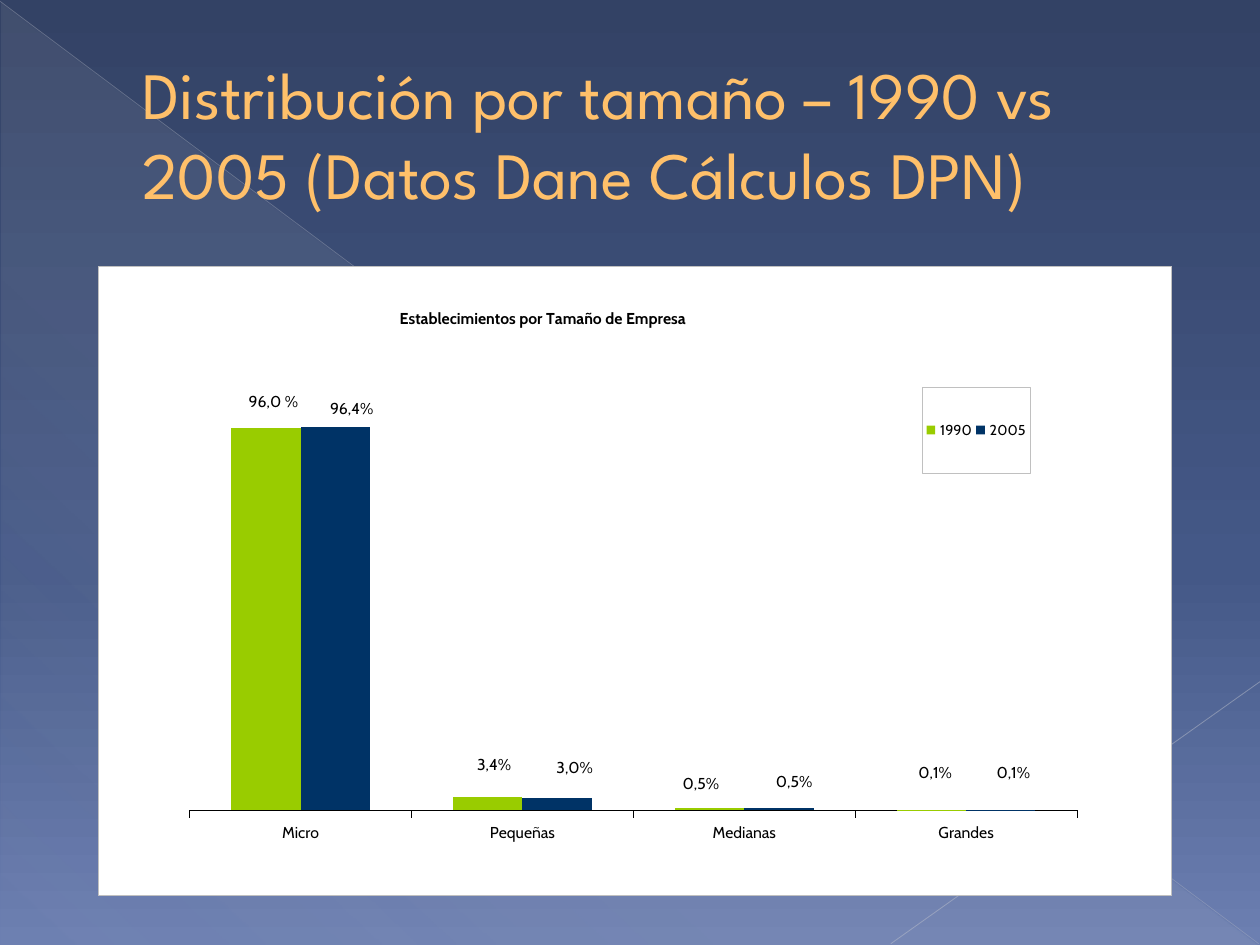
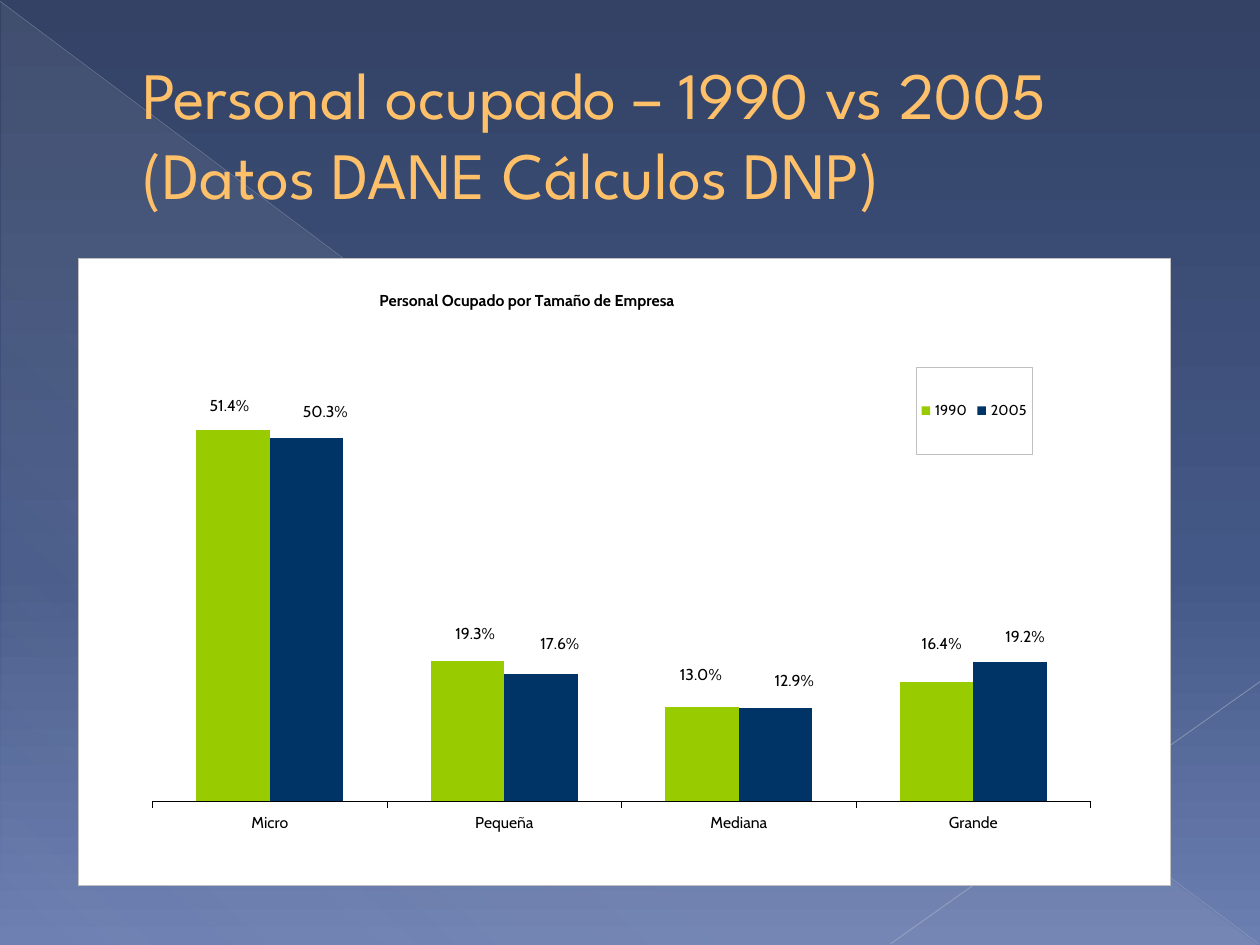
from dataclasses import dataclass
from typing import Any, Optional

from lxml import etree
from pptx import Presentation
from pptx import util as u
from pptx.chart import data as chart_data
from pptx.dml.color import RGBColor
from pptx.enum import chart as ce
from pptx.enum import shapes, text
from pptx.oxml import ns

COLORS = {
    "sky_top": "334265", "sky_middle": "445887", "sky_bottom": "6C7FB1",
    "haze": "D4D4D6", "diagonal": "B9BDC8", "corner": "C1C4CE",
    "title": "FFC06A", "title_outline": "A67800",
    "panel": "FFFFFF", "border": "C0C0C0", "ink": "000000",
    "1990": "99CC00", "2005": "003366",
}
TITLE_FONT, CHART_FONT = "League Spartan", "Cabin"
LABEL_SIZE = 9


@dataclass(frozen=True)
class Ray:
    start: tuple[float, float]
    end: tuple[float, float]
    color: str
    width: float
    opacity: int


@dataclass(frozen=True)
class YearSeries:
    year: str
    values: tuple[float, ...]
    label_shifts: tuple[tuple[float, float], ...]  # inches from the bar's own label place
    captions: Optional[tuple[str, ...]] = None


@dataclass(frozen=True)
class ChartSlide:
    heading: str
    chart_title: str
    box: tuple[float, float, float, float]
    categories: tuple[str, ...]
    years: tuple[YearSeries, ...]
    number_format: str
    axis_max: float
    gridlines: bool
    plot_area: tuple[float, ...]  # this and the next two are fractions of the chart
    legend_area: tuple[float, ...]
    title_corner: tuple[float, ...]


RAYS = (
    Ray((0, 0.01), (9.99, 7.49), "diagonal", 0.39, 35),
    Ray((10, 5.41), (7.07, 7.49), "corner", 0.47, 45),
)

SLIDES = (
    ChartSlide(
        heading="Distribución por tamaño – 1990 vs 2005 (Datos Dane Cálculos DPN)",
        chart_title="Establecimientos por Tamaño de Empresa",
        box=(0.78, 2.11, 8.52, 5),
        categories=("Micro", "Pequeñas", "Medianas", "Grandes"),
        years=(
            YearSeries("1990", (96, 3.4, 0.5, 0.1),
                       ((0.06, -0.09), (0.05, -0.14), (-0.07, -0.08), (0.03, -0.18)),
                       ("96,0 %", "3,4%", "0,5%", "0,1%")),
            YearSeries("2005", (96.3, 3, 0.5, 0.1),
                       ((0.13, -0.03), (0.14, -0.13), (0.12, -0.1), (0.1, -0.18)),
                       ("96,4%", "3,0%", "0,5%", "0,1%")),
        ),
        number_format="0.0", axis_max=100, gridlines=False,
        plot_area=(0.085, 0.232, 0.827, 0.633),
        legend_area=(0.768, 0.192, 0.1, 0.137),
        title_corner=(0.278, 0.06),
    ),
    ChartSlide(
        heading="Personal ocupado – 1990 vs 2005 (Datos DANE Cálculos DNP)",
        chart_title="Personal Ocupado por Tamaño de Empresa",
        box=(0.62, 2.05, 8.67, 4.98),
        categories=("Micro", "Pequeña", "Mediana", "Grande"),
        years=(
            YearSeries("1990", (0.514, 0.193, 0.13, 0.164),
                       ((-0.03, -0.07), (0.06, -0.1), (-0.01, -0.14), (0.04, -0.19))),
            YearSeries("2005", (0.503, 0.176, 0.129, 0.192),
                       ((0.15, -0.09), (0.15, -0.12), (0.15, -0.1), (0.12, -0.09))),
        ),
        number_format="0.0%", axis_max=0.6, gridlines=True,
        plot_area=(0.068, 0.174, 0.859, 0.691),
        legend_area=(0.767, 0.173, 0.107, 0.139),
        title_corner=(0.273, 0.044),
    ),
)


def rgb(name: str) -> RGBColor:
    return RGBColor.from_string(COLORS[name])


def add_node(parent: Any, tag: str, **attributes: Any) -> Any:
    values = {key: str(value) for key, value in attributes.items()}
    return etree.SubElement(parent, ns.qn(tag), values)


def add_color(parent: Any, name: str, opacity: int = 100) -> None:
    color = add_node(parent, "a:srgbClr", val=COLORS[name])
    if opacity < 100:
        add_node(color, "a:alpha", val=opacity * 1000)


def set_gradient(holder: Any, stops: tuple, angle: int) -> None:
    """Replace the solid fill in holder; each stop is position, colour, opacity."""
    solid = holder.find(ns.qn("a:solidFill"))
    gradient = etree.Element(ns.qn("a:gradFill"), rotWithShape="1")
    stop_list = add_node(gradient, "a:gsLst")
    for position, color, opacity in stops:
        add_color(add_node(stop_list, "a:gs", pos=position * 1000), color, opacity)
    add_node(gradient, "a:lin", ang=angle * 60000, scaled=0)
    holder.replace(solid, gradient)


def style_font(font: Any, *, size: float, face: str = CHART_FONT,
               color: str = "ink", bold: bool = False) -> None:
    font.size, font.name, font.bold = u.Pt(size), face, bold
    font.color.rgb = rgb(color)


def write(frame: Any, content: str, **font_format: Any) -> Any:
    run = frame.paragraphs[0].add_run()
    run.text = content
    style_font(run.font, **font_format)
    return run


def draw_backdrop(slide: Any) -> None:
    slide.background.fill.solid()
    set_gradient(slide.element.find(".//" + ns.qn("p:bgPr")),
                 ((0, "sky_top", 100), (60, "sky_middle", 100), (100, "sky_bottom", 100)), 90)
    haze = slide.shapes.add_shape(shapes.MSO_SHAPE.RIGHT_TRIANGLE, u.Inches(0.01),
                                  u.Inches(0.02), u.Inches(9.98), u.Inches(7.48))
    haze.shadow.inherit = False
    haze.line.fill.background()
    haze.fill.solid()
    set_gradient(haze.element.spPr, ((0, "haze", 10), (70, "haze", 8), (100, "haze", 1)), 133)
    for ray in RAYS:
        line = slide.shapes.add_connector(shapes.MSO_CONNECTOR.STRAIGHT,
                                          *map(u.Inches, ray.start + ray.end))
        line.line.width = u.Pt(ray.width)
        line.line.color.rgb = rgb(ray.color)
        color = line.element.spPr.find(".//" + ns.qn("a:srgbClr"))
        add_node(color, "a:alpha", val=ray.opacity * 1000)
        add_node(line.element.spPr, "a:effectLst")


def draw_heading(slide: Any, heading: str) -> None:
    box = slide.shapes.add_textbox(u.Inches(0.5), u.Inches(0.29), u.Inches(9), u.Inches(1.53))
    frame = box.text_frame
    frame.word_wrap = True
    frame.vertical_anchor = text.MSO_ANCHOR.MIDDLE
    run = write(frame, heading, size=37.8, face=TITLE_FONT, color="title")
    frame.paragraphs[0]._p.get_or_add_pPr().set("marL", str(u.Inches(0.53)))
    outline = etree.Element(ns.qn("a:ln"), w=str(u.Pt(0.5)))
    add_color(add_node(outline, "a:solidFill"), "title_outline")
    run.font._element.insert(0, outline)


def set_layout(parent: Any, index: int, area: tuple, *, edge: bool = True,
               inner: bool = False) -> None:
    """Place a chart part at area, or shift it by area when edge is False."""
    for old in parent.findall(ns.qn("c:layout")):
        parent.remove(old)
    layout = etree.Element(ns.qn("c:layout"))
    manual = add_node(layout, "c:manualLayout")
    if inner:
        add_node(manual, "c:layoutTarget", val="inner")
    if edge:
        add_node(manual, "c:xMode", val="edge")
        add_node(manual, "c:yMode", val="edge")
    for key, value in zip("xywh", area):
        add_node(manual, f"c:{key}", val=round(value, 4))
    parent.insert(index, layout)


def framed_panel() -> Any:
    panel = etree.Element(ns.qn("c:spPr"))
    add_color(add_node(panel, "a:solidFill"), "panel")
    border = add_node(panel, "a:ln", w=u.Pt(0.25))
    add_color(add_node(border, "a:solidFill"), "border")
    return panel


def label_series(series: Any, node: Any, year: YearSeries, content: ChartSlide) -> None:
    labels = series.data_labels
    labels.show_value = True
    labels.number_format = content.number_format
    labels.number_format_is_linked = False
    style_font(labels.font, size=LABEL_SIZE)
    for index in range(len(year.values)):
        label = series.points[index].data_label
        if year.captions:
            write(label.text_frame, year.captions[index], size=LABEL_SIZE)
        else:
            style_font(label.font, size=LABEL_SIZE)
        label.position = ce.XL_LABEL_POSITION.OUTSIDE_END
    for leader in node.iter(ns.qn("c:showLeaderLines")):
        leader.set("val", "0")
    width, height = content.box[2:]
    for label_node, (dx, dy) in zip(node.iter(ns.qn("c:dLbl")), year.label_shifts):
        set_layout(label_node, 1, (dx / width, dy / height), edge=False)


def style_axes(chart: Any, content: ChartSlide) -> None:
    sizes = chart.category_axis
    sizes.major_tick_mark = ce.XL_TICK_MARK.OUTSIDE
    sizes.format.line.width = u.Pt(0.25)
    sizes.format.line.color.rgb = rgb("ink")
    style_font(sizes.tick_labels.font, size=LABEL_SIZE)
    share = chart.value_axis
    share.minimum_scale, share.maximum_scale = 0, content.axis_max
    share.major_unit = 20
    share.has_major_gridlines = content.gridlines
    if content.gridlines:
        share.major_gridlines.format.line.width = u.Pt(0.25)
        share.major_gridlines.format.line.color.rgb = rgb("border")
    share.visible = False


def draw_chart(slide: Any, content: ChartSlide) -> None:
    figures = chart_data.CategoryChartData(number_format=content.number_format)
    figures.categories = content.categories
    for year in content.years:
        figures.add_series(year.year, year.values)
    chart = slide.shapes.add_chart(ce.XL_CHART_TYPE.COLUMN_CLUSTERED,
                                   *map(u.Inches, content.box), figures).chart
    style_font(chart.font, size=10.8, face="Arial")
    chart.has_title = True
    write(chart.chart_title.text_frame, content.chart_title, size=LABEL_SIZE, bold=True)
    chart.has_legend = True
    chart.legend.position = ce.XL_LEGEND_POSITION.RIGHT
    chart.legend.include_in_layout = False
    style_font(chart.legend.font, size=8.2)
    style_axes(chart, content)

    plot = chart.plots[0]
    plot.gap_width = 120
    plot.vary_by_categories = False
    root = chart.element
    for series, node, year in zip(plot.series, root.iter(ns.qn("c:ser")), content.years):
        series.format.fill.solid()
        series.format.fill.fore_color.rgb = rgb(year.year)
        label_series(series, node, year, content)

    body = root.find(ns.qn("c:chart"))
    legend = body.find(ns.qn("c:legend"))
    set_layout(body.find(ns.qn("c:plotArea")), 0, content.plot_area, inner=True)
    set_layout(body.find(ns.qn("c:title")), 1, content.title_corner)
    set_layout(legend, 1, content.legend_area)
    legend.find(ns.qn("c:txPr")).addprevious(framed_panel())
    body.addnext(framed_panel())


def main() -> None:
    deck = Presentation()
    deck.slide_width, deck.slide_height = u.Inches(10), u.Inches(7.5)
    for content in SLIDES:
        slide = deck.slides.add_slide(deck.slide_layouts[6])
        draw_backdrop(slide)
        draw_heading(slide, content.heading)
        draw_chart(slide, content)
    deck.save("out.pptx")


if __name__ == "__main__":
    main()
